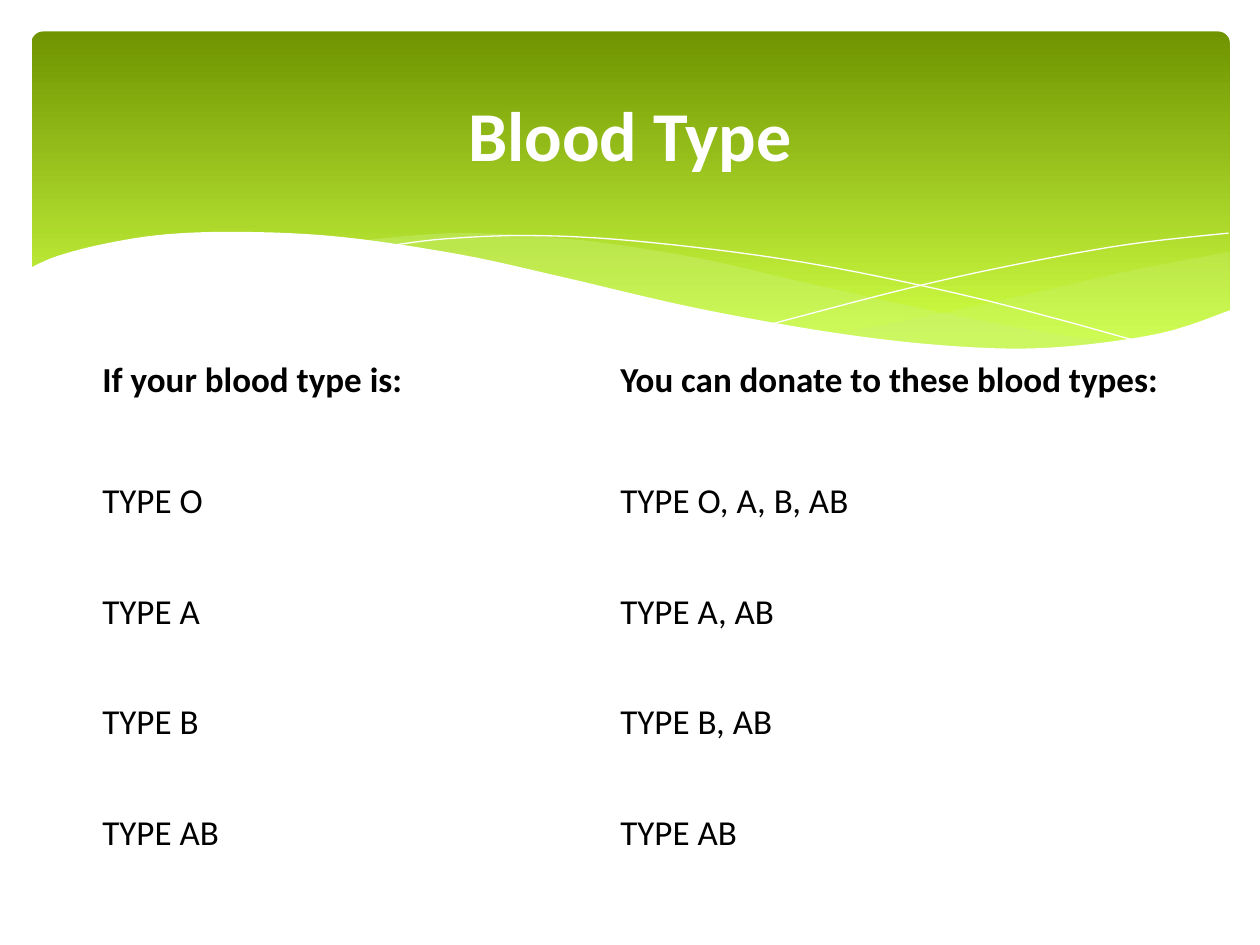
from lxml import etree
from pptx import Presentation
from pptx.dml.color import RGBColor
from pptx.enum.shapes import MSO_SHAPE
from pptx.enum.text import MSO_ANCHOR, PP_ALIGN
from pptx.oxml.ns import qn
from pptx.util import Pt

ROUNDED = MSO_SHAPE.ROUNDED_RECTANGLE
MIDDLE = MSO_ANCHOR.MIDDLE
LEFT, CENTER = PP_ALIGN.LEFT, PP_ALIGN.CENTER
NO_STYLE_NO_GRID = "{2D5ABB26-0587-4C30-8999-92F81FD0307C}"
TITLE_ONLY = 5

WHITE, BLACK = "FFFFFF", "000000"
DARK_GREEN, LIME, PALE_LIME = "6F9400", "D0FF44", "CAF278"

# Knots of the wave curves, in points
RIGHT_SWELL_TOP = [(702.7, 144), (652, 153.4), (619.9, 160.6), (560.9, 174.2),
                   (508.3, 185), (475.9, 190.8)]
RIGHT_SWELL_BOTTOM = [(475.9, 190.8), (527, 196.9), (578.2, 200),
                      (628, 197.3), (668.2, 189.4), (702.7, 177.8)]
LONG_SWELL_TOP = [(643, 196.6), (602.6, 190.8), (533.5, 177.8), (452.9, 159.8),
                  (399.6, 147.6), (334.8, 137.5), (273.6, 133.2),
                  (236.2, 134.6), (205.9, 137.5)]
LONG_SWELL_BOTTOM = [(205.9, 137.5), (260.6, 146.2), (323.3, 159.8),
                     (407.5, 178.6), (468, 190.1), (529.9, 198),
                     (589, 200.2), (643, 196.6)]
FALLING_LINE = [(222.5, 140.4), (254.2, 136.5), (299.5, 134.6), (352.1, 136.8),
                (419, 144), (478.8, 153.4), (547.2, 167.8), (598.3, 180.7),
                (653, 195.8)]
RISING_LINE = [(441.4, 185), (518.4, 164.9), (580.3, 151.2), (644.4, 139.7),
               (702, 133.2)]
WHITE_WAVE = [(703.4, 177.1), (662.4, 190.6), (602.6, 198.5), (547.9, 198),
              (481, 190.8), (399.6, 176.4), (321.8, 158.4), (262.8, 145.4),
              (195.1, 135.4), (139, 132.5), (95, 133.9), (61.2, 139),
              (33.1, 146.2), (16.6, 153.4)]
WHITE_WAVE_BASE = [(16.6, 236.9), (703.4, 236.9)]

ROWS = [
    ("If your blood type is:", "You can donate to these blood types:"),
    ("TYPE O", "TYPE O, A, B, AB"),
    ("TYPE A", "TYPE A, AB"),
    ("TYPE B", "TYPE B, AB"),
    ("TYPE AB", "TYPE AB"),
]


def rgb(color):
    return RGBColor.from_string(color)


def set_text(tf, text, size=20, color=BLACK, bold=False, align=LEFT):
    p = tf.paragraphs[0]
    p.alignment = align
    r = p.add_run()
    r.text = text
    r.font.name = "Calibri"
    r.font.size = Pt(size)
    r.font.bold = bold
    r.font.color.rgb = rgb(color)


def smooth(knots, steps=6):
    """Return points along a Catmull-Rom curve through the knots."""
    ends = [knots[0], *knots, knots[-1]]
    points = [knots[0]]
    for a, b, c, d in zip(ends, ends[1:], ends[2:], ends[3:]):
        for i in range(1, steps + 1):
            t = i / steps
            points.append(tuple(
                (2 * q + (r - p) * t + (2 * p - 5 * q + 4 * r - s) * t ** 2
                 + (3 * q - p - 3 * r + s) * t ** 3) / 2
                for p, q, r, s in zip(a, b, c, d)))
    return points


def add_outline(s, points, fill=None, alpha=None, line=None):
    start, *rest = [(Pt(x), Pt(y)) for x, y in points]
    builder = s.shapes.build_freeform(*start)
    builder.add_line_segments(rest, close=fill is not None)
    sp = builder.convert_to_shape()
    sp.shadow.inherit = False
    if fill:
        sp.fill.solid()
        sp.fill.fore_color.rgb = rgb(fill)
    else:
        sp.fill.background()
    if alpha:
        clr = sp.fill._xPr.find(qn("a:solidFill"))[0]
        etree.SubElement(clr, qn("a:alpha"), val=str(alpha * 1000))
    if line:
        sp.line.color.rgb = rgb(line)
        sp.line.width = Pt(0)
    else:
        sp.line.fill.background()


def add_banner(s):
    sp = s.shapes.add_shape(ROUNDED, Pt(18), Pt(18), Pt(684.7), Pt(194.4))
    sp.adjustments[0] = 0.034
    sp.shadow.inherit = False
    sp.line.fill.background()
    sp.fill.gradient()
    sp.fill.gradient_angle = 270
    stops = zip(sp.fill.gradient_stops, (0, 0.9), (DARK_GREEN, LIME))
    for stop, position, color in stops:
        stop.position = position
        stop.color.rgb = rgb(color)


def add_waves(s):
    add_outline(s, smooth(RIGHT_SWELL_TOP) + smooth(RIGHT_SWELL_BOTTOM),
                fill=PALE_LIME, alpha=29)
    add_outline(s, smooth(LONG_SWELL_TOP) + smooth(LONG_SWELL_BOTTOM),
                fill=PALE_LIME, alpha=40)
    for knots in (FALLING_LINE, RISING_LINE):
        add_outline(s, smooth(knots), line=WHITE)
    add_outline(s, smooth(WHITE_WAVE) + WHITE_WAVE_BASE, fill=WHITE)


def add_blood_table(s):
    widths, heights = (296, 328.3), (74.9, 63.3, 63.3, 63.3, 63.3)
    frame = s.shapes.add_table(len(ROWS), len(widths), Pt(54), Pt(180),
                               Pt(sum(widths)), Pt(sum(heights)))
    table = frame.table
    table.first_row = table.horz_banding = False
    table._tbl.tblPr.find(qn("a:tableStyleId")).text = NO_STYLE_NO_GRID
    for column, width in zip(table.columns, widths):
        column.width = Pt(width)
    for i, (row, height, texts) in enumerate(zip(table.rows, heights, ROWS)):
        row.height = Pt(height)
        for cell, text in zip(row.cells, texts):
            cell.fill.background()
            cell.vertical_anchor = MIDDLE
            cell.margin_left = cell.margin_right = Pt(4.5)
            cell.margin_top = cell.margin_bottom = Pt(2.25)
            set_text(cell.text_frame, text, bold=i == 0)


def add_title(s):
    title = s.shapes.title
    title.left, title.top = Pt(36), Pt(27)
    title.width, title.height = Pt(648), Pt(98.6)
    title.text_frame.vertical_anchor = MIDDLE
    set_text(title.text_frame, "Blood Type", size=40, color=WHITE, bold=True,
             align=CENTER)
    # Bring the title in front of the banner
    s.shapes._spTree.append(title._element)


def main():
    prs = Presentation()
    prs.slide_width, prs.slide_height = Pt(720), Pt(540)
    s = prs.slides.add_slide(prs.slide_layouts[TITLE_ONLY])
    add_banner(s)
    add_waves(s)
    add_blood_table(s)
    add_title(s)
    prs.save("out.pptx")


if __name__ == "__main__":
    main()
